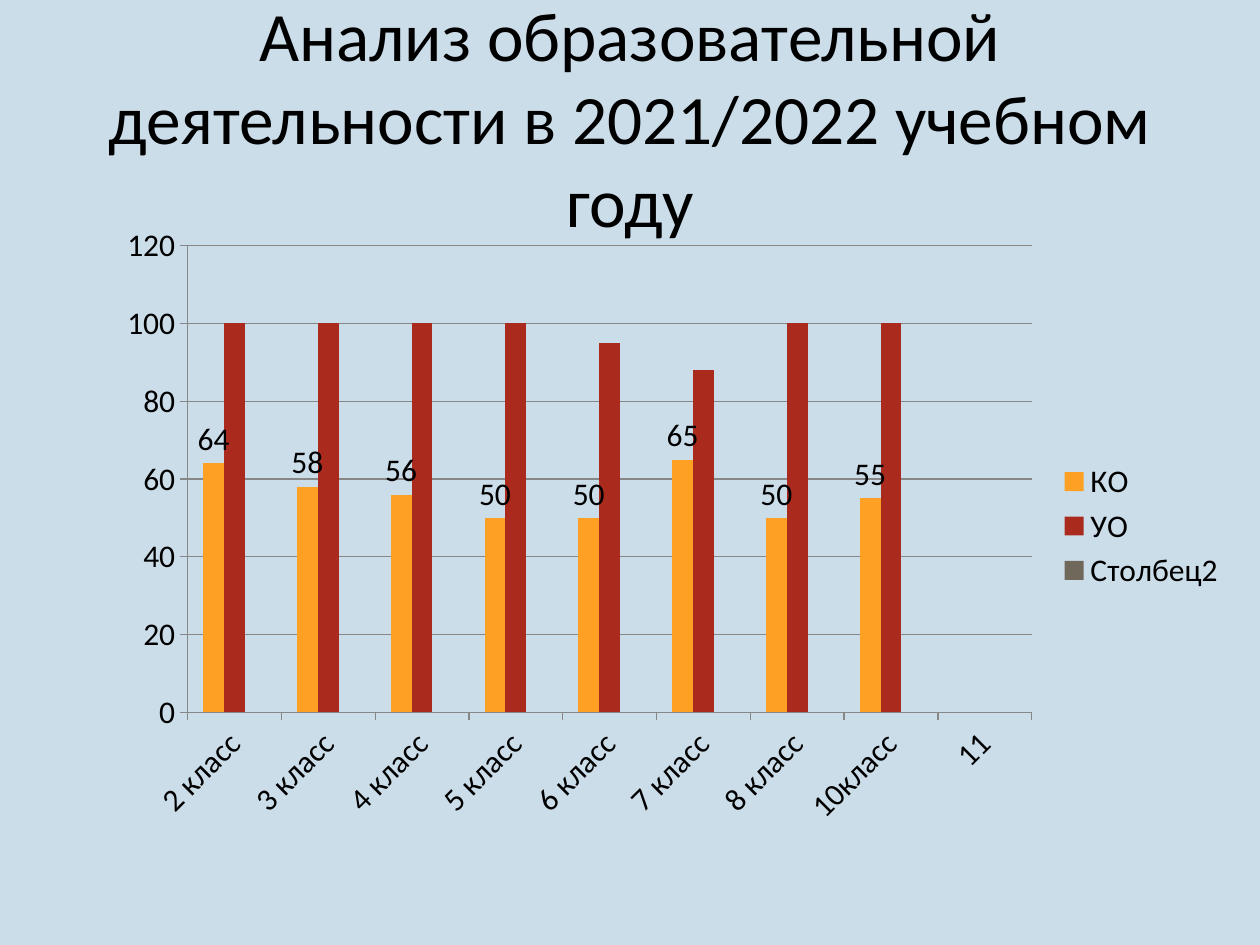
"""Build a slide with a title and a clustered column chart of class results."""
from dataclasses import dataclass

from pptx import Presentation
from pptx.chart.data import CategoryChartData
from pptx.dml.color import RGBColor
from pptx.enum.chart import XL_CHART_TYPE, XL_LABEL_POSITION, XL_LEGEND_POSITION, XL_TICK_MARK
from pptx.enum.text import MSO_ANCHOR, MSO_AUTO_SIZE, PP_ALIGN
from pptx.util import Pt

COLUMN = XL_CHART_TYPE.COLUMN_CLUSTERED
ABOVE = XL_LABEL_POSITION.OUTSIDE_END
RIGHT = XL_LEGEND_POSITION.RIGHT
OUT = XL_TICK_MARK.OUTSIDE
NONE = XL_TICK_MARK.NONE
MIDDLE = MSO_ANCHOR.MIDDLE
FIXED = MSO_AUTO_SIZE.NONE
CENTER = PP_ALIGN.CENTER

FONT = "Calibri"
COLORS = {
    "back": "CCDDEA",
    "text": "000000",
    "line": "878787",
    "gold": "FDA023",
    "red": "AA2B1E",
    "gray": "71685C",
}
GRADES = ["2 класс", "3 класс", "4 класс", "5 класс", "6 класс",
          "7 класс", "8 класс", "10класс", "11"]


@dataclass
class Series:
    name: str
    color: str
    vals: list
    labels: bool = False


@dataclass
class Box:
    left: float
    top: float
    width: float
    height: float

    def points(self) -> tuple:
        return Pt(self.left), Pt(self.top), Pt(self.width), Pt(self.height)


SERIES = [
    Series("КО", "gold", [64, 58, 56, 50, 50, 65, 50, 55, None], labels=True),
    Series("УО", "red", [100, 100, 100, 100, 95, 88, 100, 100, None]),
    Series("Столбец2", "gray", [None] * len(GRADES)),
]


def color(name: str) -> RGBColor:
    return RGBColor.from_string(COLORS[name])


def style(font, size: float, ink: str = "text") -> None:
    font.name = FONT
    font.size = Pt(size)
    font.bold = False
    font.color.rgb = color(ink)


def write(shape, text: str, *, size: float, ink: str = "text",
          align=CENTER, anchor=MIDDLE) -> None:
    frame = shape.text_frame
    frame.word_wrap = True
    frame.auto_size = FIXED
    frame.vertical_anchor = anchor
    para = frame.paragraphs[0]
    para.alignment = align
    run = para.add_run()
    run.text = text
    style(run.font, size, ink)


def rule(line) -> None:
    line.color.rgb = color("line")
    line.width = Pt(0.75)


def paint(plot, rows: list) -> None:
    for bar, row in zip(plot.series, rows):
        bar.format.fill.solid()
        bar.format.fill.fore_color.rgb = color(row.color)
        bar.invert_if_negative = False
        if row.labels:
            labels = bar.data_labels
            labels.show_value = True
            labels.position = ABOVE
            style(labels.font, 18)


def draw_chart(slide, box: Box, rows: list) -> None:
    data = CategoryChartData()
    data.categories = GRADES
    for row in rows:
        data.add_series(row.name, row.vals)
    chart = slide.shapes.add_chart(COLUMN, *box.points(), data).chart
    style(chart.font, 18)
    chart.has_title = False
    chart.has_legend = True
    chart.legend.position = RIGHT
    chart.legend.include_in_layout = False
    plot = chart.plots[0]
    plot.gap_width = 150
    plot.overlap = 0
    plot.vary_by_categories = False
    paint(plot, rows)
    for axis in (chart.category_axis, chart.value_axis):
        axis.major_tick_mark = OUT
        axis.minor_tick_mark = NONE
        rule(axis.format.line)
    chart.value_axis.has_major_gridlines = True
    rule(chart.value_axis.major_gridlines.format.line)


def main() -> None:
    deck = Presentation()
    deck.slide_width, deck.slide_height = Pt(720), Pt(540)
    slide = deck.slides.add_slide(deck.slide_layouts[5])
    slide.background.fill.solid()
    slide.background.fill.fore_color.rgb = color("back")
    title = slide.shapes.title
    title.left, title.top, title.width, title.height = Box(36, 21.6, 648, 90).points()
    write(title, "Анализ образовательной деятельности в 2021/2022 учебном году",
          size=39.6)
    draw_chart(slide, Box(59.76, 122.4, 648, 356.4), SERIES)
    deck.save("out.pptx")


if __name__ == "__main__":
    main()
